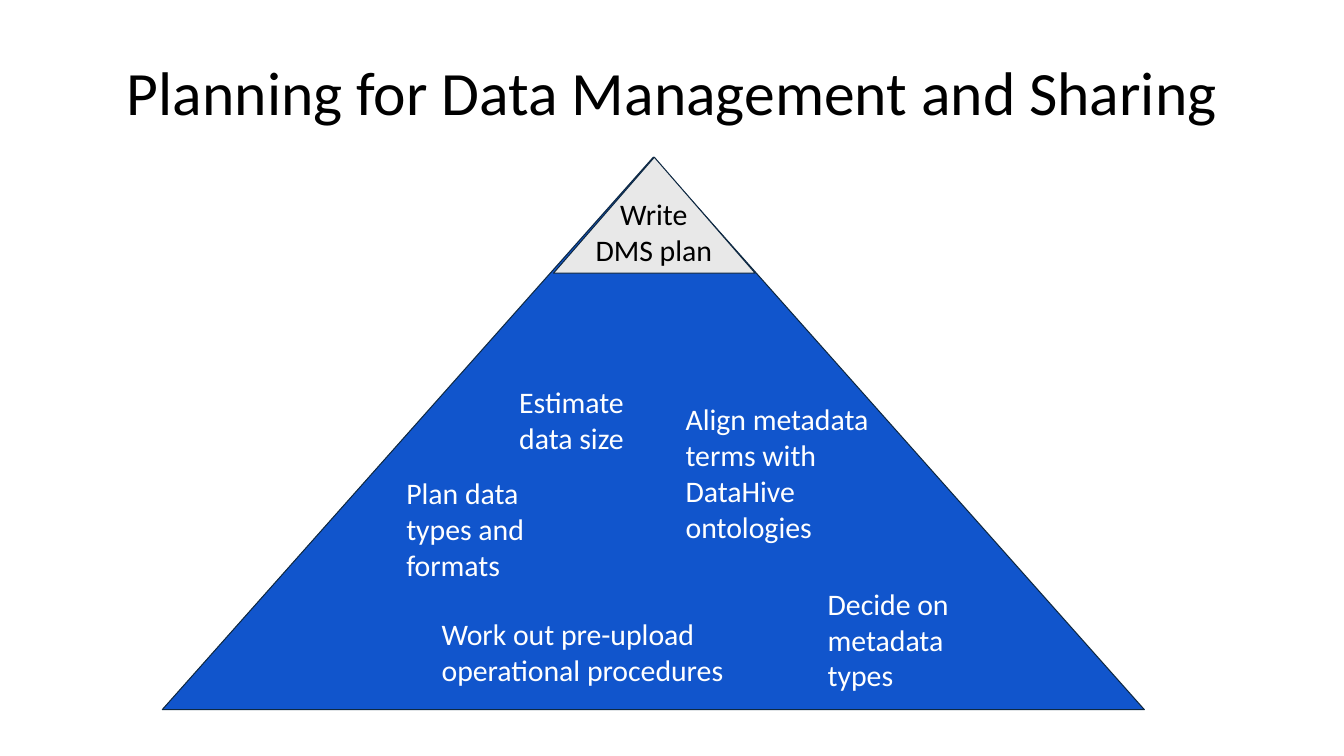
from dataclasses import dataclass

from pptx import Presentation
from pptx.dml.color import RGBColor
from pptx.enum.shapes import MSO_SHAPE
from pptx.enum.text import MSO_ANCHOR, MSO_AUTO_SIZE, PP_ALIGN
from pptx.util import Inches, Pt


@dataclass(frozen=True)
class Theme:
    font: str = "Calibri"
    title_size: float = 44
    label_size: float = 21.3
    black: str = "000000"
    white: str = "FFFFFF"
    blue: str = "1155CC"
    grey: str = "E8E8E8"
    outline: str = "0E2841"
    inset: float = 0.13


THEME = Theme()

# Pyramid labels: text, left, top, width, height
STEPS = [
    ("Plan data types and formats", 3.9, 4.58, 1.73, 1.35),
    ("Estimate data size", 5.02, 3.68, 1.73, 0.99),
    ("Decide on metadata types", 8.08, 5.68, 1.73, 1.35),
    ("Align metadata terms with DataHive ontologies", 6.67, 3.85, 2.38, 1.71),
    ("Work out pre-upload operational procedures", 4.25, 5.98, 3.11, 0.99),
]


def write_text(sp, text, size=THEME.label_size, color=THEME.white,
               align=PP_ALIGN.LEFT, auto_size=MSO_AUTO_SIZE.SHAPE_TO_FIT_TEXT):
    tf = sp.text_frame
    tf.word_wrap = True
    tf.auto_size = auto_size
    tf.vertical_anchor = MSO_ANCHOR.TOP
    tf.margin_left = tf.margin_right = Inches(THEME.inset)
    tf.margin_top = tf.margin_bottom = Inches(THEME.inset)
    p = tf.paragraphs[0]
    p.alignment = align
    r = p.add_run()
    r.text = text
    r.font.name = THEME.font
    r.font.size = Pt(size)
    r.font.color.rgb = RGBColor.from_string(color)


def add_title(slide, text):
    sp = slide.shapes.title
    sp.left, sp.top = Inches(0.92), Inches(0.4)
    sp.width, sp.height = Inches(11.5), Inches(1.45)
    write_text(sp, text, size=THEME.title_size, color=THEME.black,
               align=PP_ALIGN.CENTER, auto_size=MSO_AUTO_SIZE.NONE)


def add_triangle(slide, left, top, width, height, fill):
    sp = slide.shapes.add_shape(MSO_SHAPE.ISOSCELES_TRIANGLE, Inches(left),
                                Inches(top), Inches(width), Inches(height))
    sp.shadow.inherit = False
    sp.fill.solid()
    sp.fill.fore_color.rgb = RGBColor.from_string(fill)
    sp.line.color.rgb = RGBColor.from_string(THEME.outline)
    sp.line.width = Pt(0.75)


def add_label(slide, text, left, top, width, height, **text_format):
    sp = slide.shapes.add_textbox(Inches(left), Inches(top),
                                  Inches(width), Inches(height))
    write_text(sp, text, **text_format)


def main():
    prs = Presentation()
    prs.slide_width, prs.slide_height = Inches(13.33), Inches(7.5)
    slide = prs.slides.add_slide(prs.slide_layouts[5])
    add_title(slide, "Planning for Data Management and Sharing")

    # Pyramid with its tip
    add_triangle(slide, 1.61, 1.56, 9.74, 5.48, THEME.blue)
    add_triangle(slide, 5.49, 1.56, 2, 1.15, THEME.grey)

    # Goal in the tip, preparation steps in the body
    add_label(slide, "Write DMS plan", 5.76, 1.81, 1.45, 0.99,
              color=THEME.black, align=PP_ALIGN.CENTER)
    for step in STEPS:
        add_label(slide, *step)

    prs.save("out.pptx")


if __name__ == "__main__":
    main()
